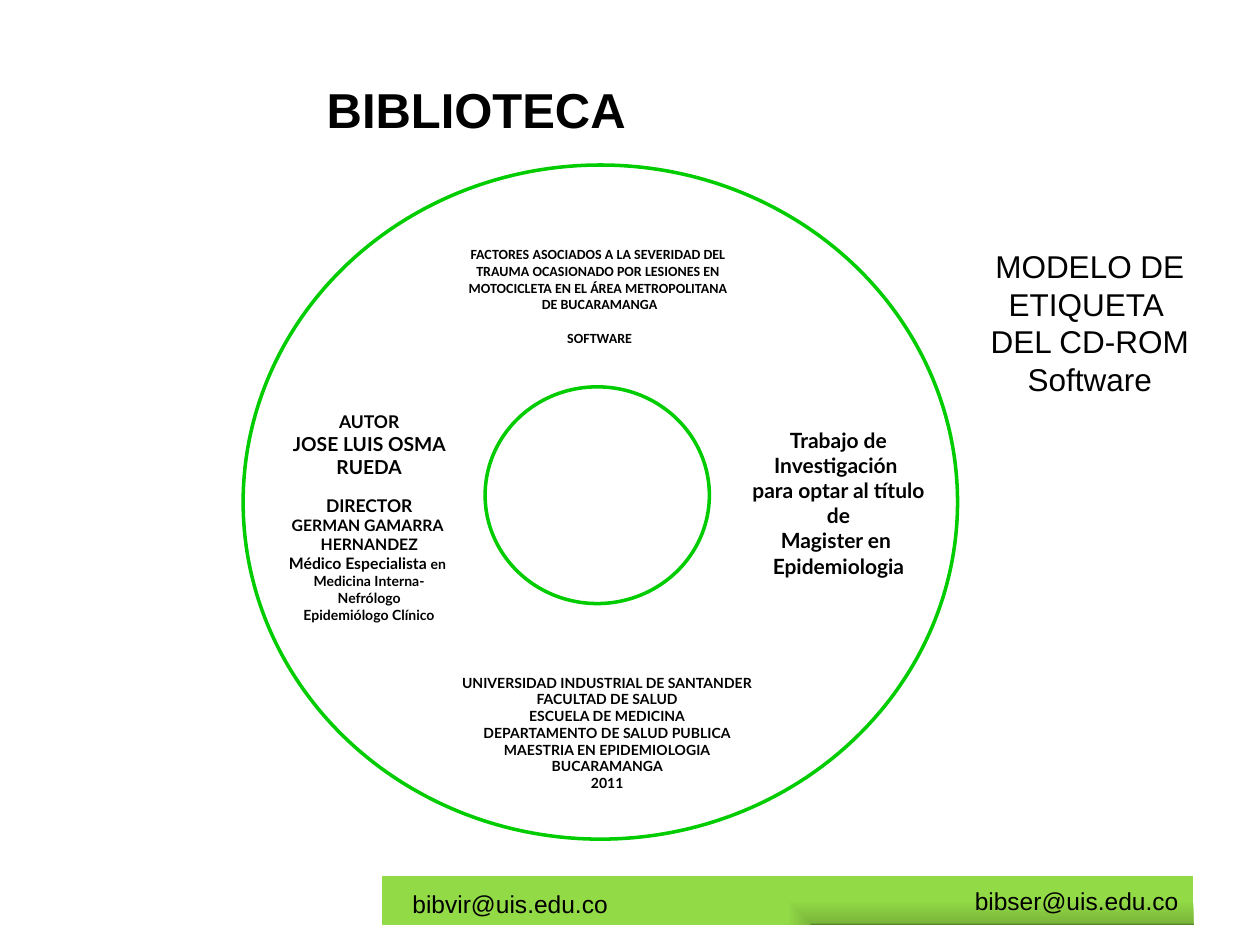
from lxml import etree
from pptx import Presentation
from pptx.dml.color import RGBColor
from pptx.enum.shapes import MSO_SHAPE as Shape
from pptx.enum.text import MSO_ANCHOR as Anchor, MSO_AUTO_SIZE as AutoSize, PP_ALIGN as Align
from pptx.oxml import parse_xml
from pptx.oxml.ns import nsdecls, qn
from pptx.util import Inches, Pt

COLORS = {
    "text": "000000",
    "ring": "00CC00",
    "outline": "00B050",
    "bar_dark": "57812A",
    "bar_middle": "7BB73B",
    "bar_light": "92DA46",
}

TITLE = {"name": "Arial", "size": Pt(28), "bold": True}
EMAIL = {"name": "Arial", "size": Pt(14), "bold": False}
CAPTION = {"name": "Arial", "size": Pt(18), "bold": False}
THESIS = {"name": "Calibri", "size": Pt(8), "bold": True}
INSTITUTION = {"name": "Lato", "size": Pt(8), "bold": True}
DEGREE = {"name": "Lato", "size": Pt(12), "bold": True}
PEOPLE = {"name": "Lato", "size": Pt(10), "bold": True}

BLOCK_GAP = Pt(9.6)


def color(name):
    return RGBColor.from_string(COLORS[name])


def add_bar(slide, position):
    """Add a rectangle whose gradient darkens towards its bottom right corner."""
    bar = slide.shapes.add_shape(Shape.RECTANGLE, *map(Inches, position))
    bar.shadow.inherit = False
    bar.line.fill.background()
    stops = "".join(
        f'<a:gs pos="{place * 1000}"><a:srgbClr val="{COLORS[name]}"/></a:gs>'
        for place, name in ((0, "bar_dark"), (9, "bar_middle"), (100, "bar_light"))
    )
    gradient = parse_xml(
        f'<a:gradFill {nsdecls("a")} rotWithShape="1"><a:gsLst>{stops}</a:gsLst>'
        '<a:path path="rect"><a:fillToRect l="100000" t="100000"/></a:path></a:gradFill>'
    )
    bar._element.spPr.find(qn("a:prstGeom")).addnext(gradient)


def add_ring(slide, position):
    ring = slide.shapes.add_shape(Shape.OVAL, *map(Inches, position))
    ring.shadow.inherit = False
    ring.fill.background()
    ring.line.color.rgb = color("ring")
    ring.line.width = Pt(2)


def add_text(slide, position, paragraphs, font, wrap=True, inset=None, gap_before=()):
    """Add centred text; a paragraph is a list of (text, size) runs or one string."""
    box = slide.shapes.add_textbox(*map(Inches, position))
    frame = box.text_frame
    frame.word_wrap = wrap
    frame.vertical_anchor = Anchor.TOP
    if inset is None:
        frame.auto_size = AutoSize.SHAPE_TO_FIT_TEXT
    else:
        for side in ("left", "top", "right", "bottom"):
            setattr(frame, f"margin_{side}", Inches(inset))
    for index, content in enumerate(paragraphs):
        paragraph = frame.add_paragraph() if index else frame.paragraphs[0]
        paragraph.alignment = Align.CENTER
        if index in gap_before:
            paragraph.space_before = BLOCK_GAP
        runs = [(content, None)] if isinstance(content, str) else content
        for text, size in runs:
            run = paragraph.add_run()
            run.text = text
            for attribute, value in font.items():
                setattr(run.font, attribute, value)
            if size:
                run.font.size = Pt(size)
            run.font.color.rgb = color("text")
    return box


def outline_text(box):
    for paragraph in box.text_frame.paragraphs:
        for run in paragraph.runs:
            line = etree.Element(qn("a:ln"), w=str(Pt(0.75)))
            fill = etree.SubElement(line, qn("a:solidFill"))
            etree.SubElement(fill, qn("a:srgbClr"), val=COLORS["outline"])
            run._r.get_or_add_rPr().insert(0, line)


def add_disc_labels(slide):
    add_text(slide, (3.32, 5.31, 3, 1.11), [
        "UNIVERSIDAD INDUSTRIAL DE SANTANDER",
        "FACULTAD DE SALUD",
        "ESCUELA DE MEDICINA",
        "DEPARTAMENTO DE SALUD PUBLICA",
        "MAESTRIA EN EPIDEMIOLOGIA",
        "BUCARAMANGA",
        "2011",
    ], INSTITUTION, inset=0.04)
    add_text(slide, (3.29, 1.91, 2.94, 0.87), [
        "FACTORES ASOCIADOS A LA SEVERIDAD DEL ",
        "TRAUMA OCASIONADO POR LESIONES EN ",
        "MOTOCICLETA EN EL ÁREA METROPOLITANA ",
        "DE BUCARAMANGA",
        "SOFTWARE",
    ], THESIS, inset=0.04, gap_before=(4,))
    add_text(slide, (5.84, 3.35, 1.63, 1.27), [
        "Trabajo de Investigación ",
        "para optar al título de",
        "Magister en ",
        "Epidemiologia",
    ], DEGREE, inset=0.04)
    add_text(slide, (2.22, 3.22, 1.42, 1.56), [
        "AUTOR",
        [("JOSE LUIS OSMA RUEDA", 11)],
        "DIRECTOR",
        [("GERMAN GAMARRA ", 9)],
        [("HERNANDEZ", 9)],
        [("Médico Especialista ", 9), ("en ", 8)],
        [("Medicina Interna- Nefrólogo", 8)],
        [("Epidemiólogo Clínico", 8)],
    ], PEOPLE, inset=0.04, gap_before=(2,))


def main():
    presentation = Presentation()
    presentation.slide_width = Inches(10)
    presentation.slide_height = Inches(7.5)
    slide = presentation.slides.add_slide(presentation.slide_layouts[6])

    add_bar(slide, (3.03, 6.95, 6.44, 0.39))
    title = add_text(slide, (2.48, 0.58, 2.6, 0.57), ["BIBLIOTECA"], TITLE, wrap=False)
    outline_text(title)
    add_text(slide, (3.17, 7.01, 1.76, 0.34), ["bibvir@uis.edu.co"], EMAIL, wrap=False)
    add_text(slide, (7.6, 6.98, 1.89, 0.34), ["bibser@uis.edu.co"], EMAIL, wrap=False)

    add_ring(slide, (1.93, 1.31, 5.67, 5.35))
    add_disc_labels(slide)
    add_ring(slide, (3.85, 3.07, 1.78, 1.72))
    add_text(slide, (7.68, 1.91, 1.94, 1.31),
             ["MODELO DE ETIQUETA ", "DEL CD-ROM", "Software"], CAPTION)

    presentation.save("out.pptx")


if __name__ == "__main__":
    main()
